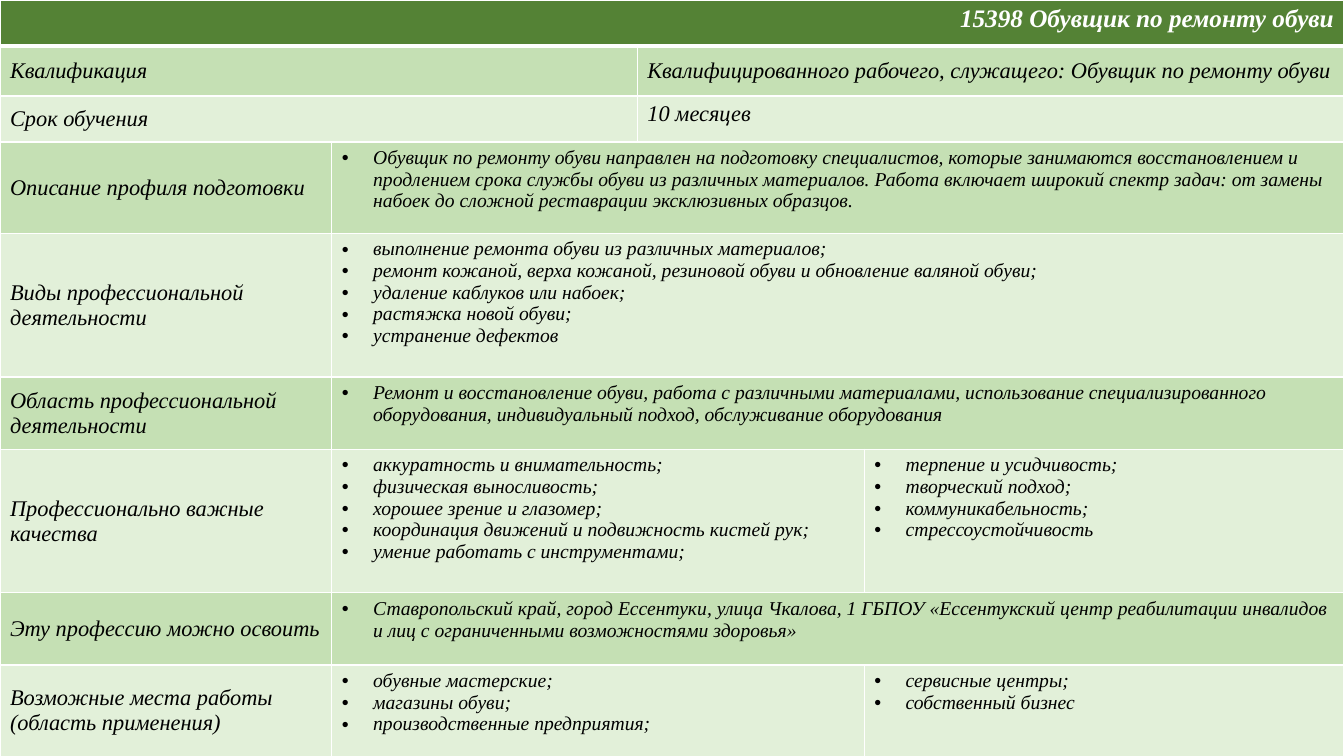
from itertools import product

from lxml.etree import SubElement
from pptx import Presentation
from pptx.dml.color import RGBColor
from pptx.enum.text import MSO_ANCHOR as Anchor, PP_ALIGN as Align
from pptx.oxml.ns import qn
from pptx.util import Cm, Pt

THEME = {
    "font": "Times New Roman",
    "header": "548235",
    "bands": ("C5E0B4", "E2F0D9"),
    "border": "FFFFFF",
    "thin": 1,
    "thick": 3,
    "indent": 0.79,
}
STYLES = {
    "title": {"size": 18, "bold": True, "color": "FFFFFF",
              "align": Align.RIGHT, "anchor": Anchor.TOP, "bullet": False},
    "label": {"size": 16, "bold": False, "color": "000000",
              "align": Align.LEFT, "anchor": Anchor.MIDDLE, "bullet": False},
    "term": {"size": 16, "bold": False, "color": "000000",
             "align": Align.LEFT, "anchor": Anchor.TOP, "bullet": False},
    "list": {"size": 14, "bold": False, "color": "000000",
             "align": Align.LEFT, "anchor": Anchor.TOP, "bullet": True},
}

COLUMN_WIDTHS = (8.36, 7.7, 5.72, 12.09)
ROWS = [
    (1.16, [(4, "title", ["15398 Обувщик по ремонту обуви"])]),
    (1.26, [
        (2, "label", ["Квалификация"]),
        (2, "label", ["Квалифицированного рабочего, служащего: Обувщик по ремонту обуви"]),
    ]),
    (1.16, [(2, "label", ["Срок обучения"]), (2, "term", ["10 месяцев"])]),
    (2.3, [
        (1, "label", ["Описание профиля подготовки"]),
        (3, "list", [
            "Обувщик по ремонту обуви направлен на подготовку специалистов, "
            "которые занимаются восстановлением и продлением срока службы обуви "
            "из различных материалов. Работа включает широкий спектр задач: "
            "от замены набоек до сложной реставрации эксклюзивных образцов.",
        ]),
    ]),
    (3.62, [
        (1, "label", ["Виды профессиональной деятельности"]),
        (3, "list", [
            "выполнение ремонта обуви из различных материалов;",
            "ремонт кожаной, верха кожаной, резиновой обуви и обновление валяной обуви;",
            "удаление каблуков или набоек;",
            "растяжка новой обуви;",
            "устранение дефектов",
        ]),
    ]),
    (1.82, [
        (1, "label", ["Область профессиональной деятельности"]),
        (3, "list", [
            "Ремонт и восстановление обуви, работа с различными материалами, "
            "использование специализированного оборудования, "
            "индивидуальный подход, обслуживание оборудования",
        ]),
    ]),
    (3.62, [
        (1, "label", ["Профессионально важные качества"]),
        (2, "list", [
            "аккуратность и внимательность;",
            "физическая выносливость;",
            "хорошее зрение и глазомер;",
            "координация движений и подвижность кистей рук;",
            "умение работать с инструментами;",
        ]),
        (1, "list", [
            "терпение и усидчивость;",
            "творческий подход;",
            "коммуникабельность;",
            "стрессоустойчивость",
        ]),
    ]),
    (1.82, [
        (1, "label", ["Эту профессию можно освоить"]),
        (3, "list", [
            "Ставропольский край, город Ессентуки, улица Чкалова, 1 ГБПОУ "
            "«Ессентукский центр реабилитации инвалидов и лиц "
            "с ограниченными возможностями здоровья»",
        ]),
    ]),
    (2.3, [
        (1, "label", ["Возможные места работы (область применения)"]),
        (2, "list", [
            "обувные мастерские;",
            "магазины обуви;",
            "производственные предприятия;",
        ]),
        (1, "list", ["сервисные центры;", "собственный бизнес"]),
    ]),
]


def add_borders(cell, row_index):
    properties = cell._tc.get_or_add_tcPr()
    thick_side = {0: "lnB", 1: "lnT"}.get(row_index)
    for side in ("lnL", "lnR", "lnT", "lnB"):
        width = THEME["thick"] if side == thick_side else THEME["thin"]
        line = SubElement(properties, qn(f"a:{side}"), w=str(Pt(width)))
        fill = SubElement(line, qn("a:solidFill"))
        SubElement(fill, qn("a:srgbClr"), val=THEME["border"])


def paint(cell, row_index):
    add_borders(cell, row_index)
    color = THEME["bands"][(row_index - 1) % 2] if row_index else THEME["header"]
    cell.fill.solid()
    cell.fill.fore_color.rgb = RGBColor.from_string(color)


def add_bullet(paragraph):
    properties = paragraph._p.get_or_add_pPr()
    indent = Cm(THEME["indent"])
    properties.set("marL", str(indent))
    properties.set("indent", str(-indent))
    SubElement(properties, qn("a:buFont"), typeface="Arial")
    SubElement(properties, qn("a:buChar"), char="•")


def write(cell, style, lines):
    cell.vertical_anchor = style["anchor"]
    frame = cell.text_frame
    for index, line in enumerate(lines):
        paragraph = frame.add_paragraph() if index else frame.paragraphs[0]
        paragraph.alignment = style["align"]
        if style["bullet"]:
            add_bullet(paragraph)
        run = paragraph.add_run()
        run.text = line
        formats = {"name": THEME["font"], "size": Pt(style["size"]),
                   "bold": style["bold"], "italic": True}
        for name, value in formats.items():
            setattr(run.font, name, value)
        run.font.color.rgb = RGBColor.from_string(style["color"])


def main():
    presentation = Presentation()
    presentation.slide_width, presentation.slide_height = Cm(33.87), Cm(19.05)
    slide = presentation.slides.add_slide(presentation.slide_layouts[6])
    table = slide.shapes.add_table(
        len(ROWS), len(COLUMN_WIDTHS), Cm(0), Cm(0),
        presentation.slide_width, presentation.slide_height).table
    for column, width in zip(table.columns, COLUMN_WIDTHS):
        column.width = Cm(width)
    for row_index, column_index in product(range(len(ROWS)), range(len(COLUMN_WIDTHS))):
        paint(table.cell(row_index, column_index), row_index)
    for row_index, (height, cells) in enumerate(ROWS):
        table.rows[row_index].height = Cm(height)
        start = 0
        for span, style_name, lines in cells:
            cell = table.cell(row_index, start)
            if span > 1:
                cell.merge(table.cell(row_index, start + span - 1))
            write(cell, STYLES[style_name], lines)
            start += span
    presentation.save("out.pptx")


if __name__ == "__main__":
    main()
